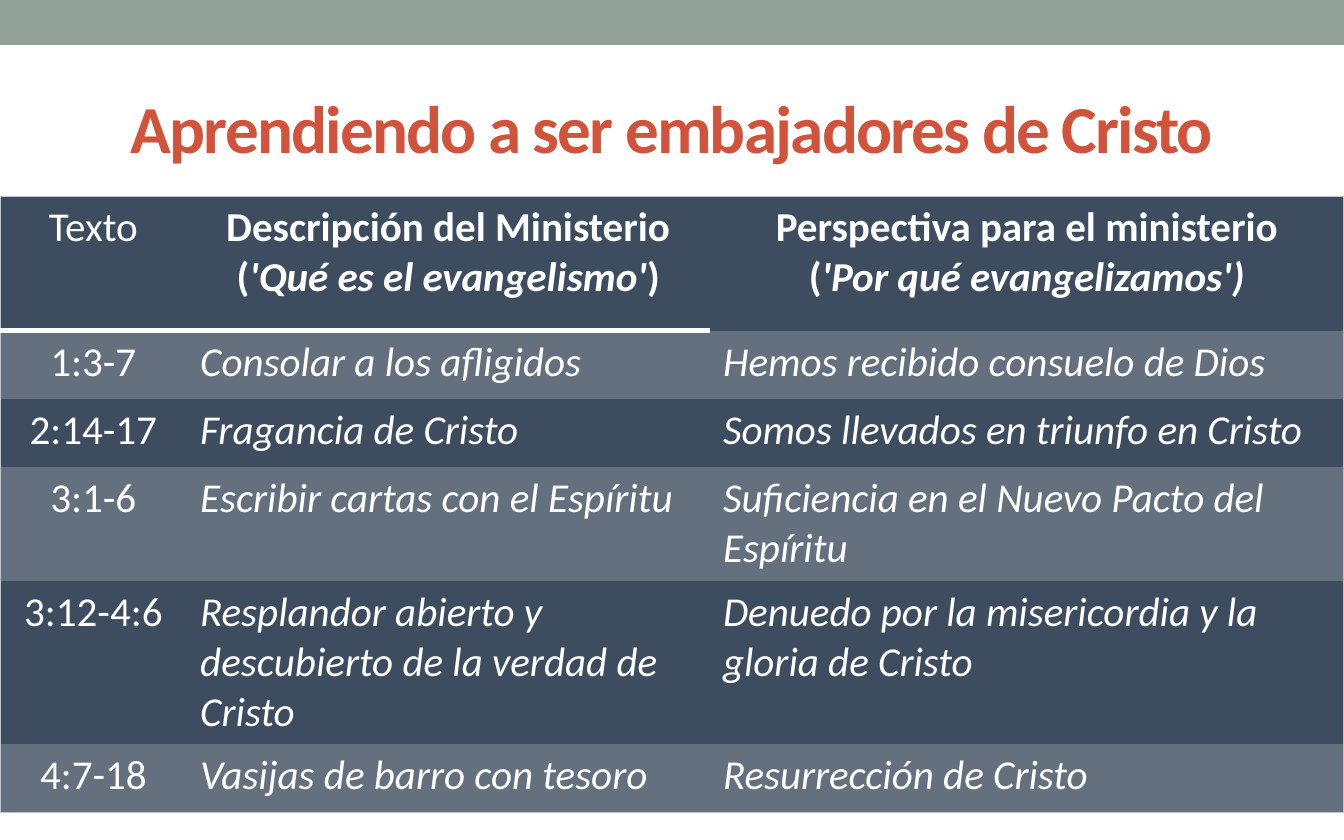
from lxml import etree
from pptx import Presentation
from pptx import util as u
from pptx.dml.color import RGBColor
from pptx.enum import shapes, text
from pptx.oxml import ns

COLORS = {"band": "93A299", "title": "D2533C", "dark": "3D4C5E", "light": "64707E",
          "edge": "C2C4C7", "white": "FFFFFF"}
PLAIN = {"bold": False, "italic": False}
BOLD = {"bold": True, "italic": False}
ITALIC = {"bold": False, "italic": True}
BOLD_ITALIC = {"bold": True, "italic": True}


def add_run(paragraph, words, size, color, styles):
    run = paragraph.add_run()
    run.text = words
    values = {"name": "Calibri", "size": u.Pt(size), **styles}
    for name, value in values.items():
        setattr(run.font, name, value)
    run.font.color.rgb = RGBColor.from_string(COLORS[color])
    return run


def add_border(cell, side, color, width):
    properties = cell._tc.get_or_add_tcPr()
    line = etree.SubElement(properties, ns.qn(f"a:ln{side}"), w=str(u.Pt(width)))
    fill = etree.SubElement(line, ns.qn("a:solidFill"))
    etree.SubElement(fill, ns.qn("a:srgbClr"), val=COLORS[color])


presentation = Presentation()
presentation.slide_width = u.Cm(25.4)
presentation.slide_height = u.Cm(15.88)
slide = presentation.slides.add_slide(presentation.slide_layouts[5])

band = slide.shapes.add_shape(shapes.MSO_SHAPE.RECTANGLE, 0, 0, u.Cm(25.4), u.Cm(0.85))
band.shadow.inherit = False
band.fill.solid()
band.fill.fore_color.rgb = RGBColor.from_string(COLORS["band"])
band.line.fill.background()

title = slide.shapes.title
title_place = {"left": 1.27, "top": 1.24, "width": 22.86, "height": 2.29}
for name, value in title_place.items():
    setattr(title, name, u.Cm(value))
title.text_frame.vertical_anchor = text.MSO_ANCHOR.MIDDLE
paragraph = title.text_frame.paragraphs[0]
paragraph.alignment = text.PP_ALIGN.CENTER
run = add_run(paragraph, "Aprendiendo a ser embajadores de Cristo", 36, "title", BOLD)
run._r.get_or_add_rPr().set("spc", "-100")

header = [
    [[("Texto", PLAIN)]],
    [[("Descripción del Ministerio", BOLD)],
     [("(", BOLD), ("'Qué es el evangelismo'", BOLD_ITALIC), (")", BOLD)]],
    [[("Perspectiva para el ministerio", BOLD)],
     [("(", BOLD), ("'Por qué evangelizamos')", BOLD_ITALIC)]],
]
passages = [
    ("1:3-7", "Consolar a los afligidos", "Hemos recibido consuelo de Dios"),
    ("2:14-17", "Fragancia de Cristo", "Somos llevados en triunfo en Cristo"),
    ("3:1-6", "Escribir cartas con el Espíritu", "Suficiencia en el Nuevo Pacto del Espíritu"),
    ("3:12-4:6", "Resplandor abierto y descubierto de la verdad de Cristo",
     "Denuedo por la misericordia y la gloria de Cristo"),
    ("4:7-18", "Vasijas de barro con tesoro", "Resurrección de Cristo"),
]
rows = [header] + [
    [[[(words, ITALIC if column else PLAIN)]] for column, words in enumerate(passage)]
    for passage in passages
]
column_widths = [3.53, 9.88, 11.99]
row_heights = [2.54, 1.29, 1.29, 2.15, 3.09, 1.29]

table = slide.shapes.add_table(len(rows), len(column_widths), 0, u.Cm(3.71),
                               u.Cm(sum(column_widths)), u.Cm(sum(row_heights))).table
table.horz_banding = False
table._tbl.tblPr.find(ns.qn("a:tableStyleId")).text = "{2D5ABB26-0587-4C30-8999-92F81FD0307C}"
for column, width in zip(table.columns, column_widths):
    column.width = u.Cm(width)
for row, height in zip(table.rows, row_heights):
    row.height = u.Cm(height)

last_row, last_column = len(rows) - 1, len(column_widths) - 1
for row_index, row in enumerate(rows):
    for column_index, paragraphs in enumerate(row):
        cell = table.cell(row_index, column_index)
        if column_index == 0:
            add_border(cell, "L", "edge", 0.75)
        if column_index == last_column:
            add_border(cell, "R", "edge", 0.75)
        if row_index == 0:
            add_border(cell, "T", "edge", 0.75)
        if row_index == 0 and column_index < last_column:
            add_border(cell, "B", "white", 3.5)
        if row_index == last_row:
            add_border(cell, "B", "edge", 0.75)
        cell.fill.solid()
        shade = "light" if row_index % 2 else "dark"
        cell.fill.fore_color.rgb = RGBColor.from_string(COLORS[shade])
        centered = row_index == 0 or column_index == 0
        frame = cell.text_frame
        for index, runs in enumerate(paragraphs):
            paragraph = frame.add_paragraph() if index else frame.paragraphs[0]
            paragraph.alignment = text.PP_ALIGN.CENTER if centered else text.PP_ALIGN.LEFT
            for words, styles in runs:
                add_run(paragraph, words, 22, "white", styles)

presentation.save("out.pptx")
